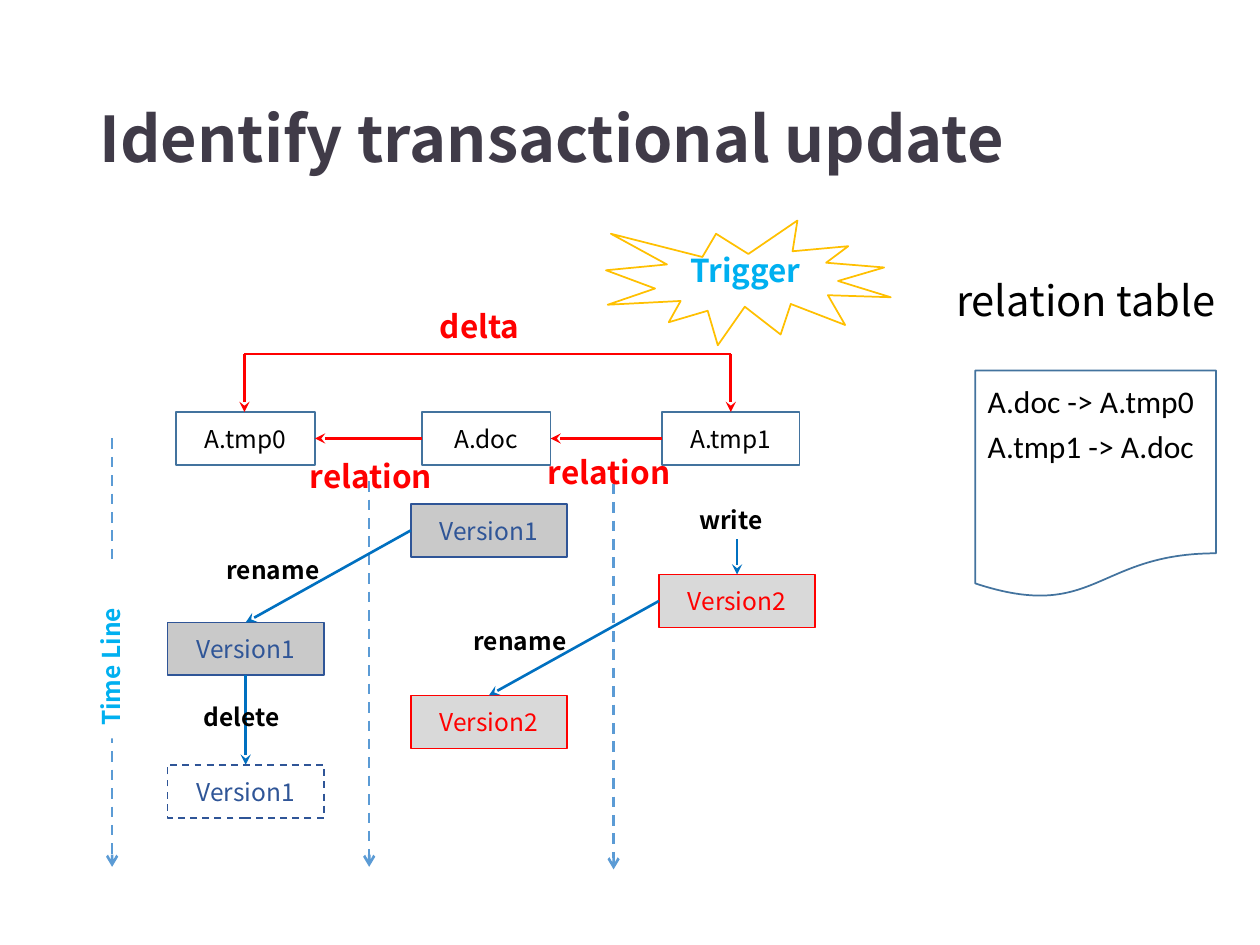
from lxml.etree import SubElement
from pptx import Presentation
from pptx.dml.color import RGBColor
from pptx.enum.dml import MSO_LINE
from pptx.enum.shapes import MSO_CONNECTOR, MSO_SHAPE
from pptx.enum.text import MSO_ANCHOR, PP_ALIGN
from pptx.oxml.ns import qn
from pptx.util import Inches, Pt

SANS, LATIN = "Noto Sans CJK SC", "Calibri"
INK, BLACK, WHITE = RGBColor(64, 59, 72), RGBColor(0, 0, 0), RGBColor(255, 255, 255)
STEEL, NAVY = RGBColor(67, 115, 158), RGBColor(47, 85, 151)
SKY, BLUE, CYAN = RGBColor(91, 155, 213), RGBColor(0, 112, 192), RGBColor(0, 176, 240)
RED, GOLD = RGBColor(255, 0, 0), RGBColor(255, 192, 0)
GREY, PALE = RGBColor(201, 201, 201), RGBColor(217, 217, 217)

# Grid: lane centres, and the tops of the rows of boxes
LANES = (1.95, 3.88, 5.85)
FILE_ROW, FILE_H = 3.27, 0.42
VER_W, VER_H = 1.24, 0.42
BAR_Y = 2.81

TITLE = "Identify transactional update"
HEADING = "relation table"
# Name, centre, width
FILES = [("A.tmp0", 1.95, 1.1), ("A.doc", 3.86, 1.02), ("A.tmp1", 5.8, 1.09)]
# Key: text, lane, top, colour, fill
VERSIONS = {
    "doc1": ("Version1", 1, 4.0, NAVY, GREY),
    "tmp1": ("Version2", 2, 4.56, RED, PALE),
    "doc2": ("Version2", 1, 5.52, RED, PALE),
    "old": ("Version1", 0, 4.94, NAVY, GREY),
    "gone": ("Version1", 0, 6.07, NAVY, None),
}
RENAMES = [("tmp1", "doc2"), ("doc1", "old")]
# Lane divider: x, top, bottom
DIVIDERS = [(0.89, 3.48, 6.88), (2.93, 3.82, 6.88), (4.87, 3.84, 6.9)]
# Text, left, top, width
STEPS = [("write", 5.45, 3.96, 0.86), ("rename", 3.66, 4.92, 1.06),
         ("rename", 1.7, 4.36, 1.06), ("delete", 1.52, 5.52, 1.06)]
RELATIONS = [("relation", 2.36, 3.58, 1.25), ("relation", 4.25, 3.55, 1.25)]
ENTRIES = ["A.doc -> A.tmp0", "A.tmp1 -> A.doc"]

deck = Presentation()
deck.slide_width, deck.slide_height = Inches(10), Inches(7.5)
slide = deck.slides.add_slide(deck.slide_layouts[1])


def write(shape, text, size=14, color=BLACK, bold=False, font=SANS,
          align=PP_ALIGN.LEFT, anchor=MSO_ANCHOR.TOP, spacing=None, inset=0.1):
    frame = shape.text_frame
    frame.word_wrap = True
    frame.vertical_anchor = anchor
    frame.margin_left = Inches(inset)
    para = frame.paragraphs[0]
    para.alignment = align
    para.space_before = Pt(0)
    para.line_spacing = spacing
    run = para.add_run()
    run.text = text
    run.font.size, run.font.bold, run.font.name = Pt(size), bold, font
    run.font.color.rgb = color


def place(shape, left, top, width, height):
    shape.left, shape.top = Inches(left), Inches(top)
    shape.width, shape.height = Inches(width), Inches(height)


def draw(kind, left, top, width, height, fill=None, line=None, dash=None):
    shape = slide.shapes.add_shape(kind, *map(Inches, (left, top, width, height)))
    shape.shadow.inherit = False
    if fill is None:
        shape.fill.background()
    else:
        shape.fill.solid()
        shape.fill.fore_color.rgb = fill
    if line is None:
        shape.line.fill.background()
    else:
        shape.line.color.rgb, shape.line.width = line, Pt(1)
        shape.line.dash_style = dash
    return shape


def label(text, left, top, width, height=0.34, **style):
    box = slide.shapes.add_textbox(*map(Inches, (left, top, width, height)))
    write(box, text, **style)


def link(start, end, color, head="stealth", dash=None):
    line = slide.shapes.add_connector(MSO_CONNECTOR.STRAIGHT, *map(Inches, start + end))
    line.line.color.rgb, line.line.width = color, Pt(1.5)
    line.line.dash_style = dash
    if head:
        SubElement(line.line._get_or_add_ln(), qn("a:tailEnd"), type=head)
    SubElement(line._element.spPr, qn("a:effectLst"))


def top_mid(key):
    _, lane, top, *_ = VERSIONS[key]
    return LANES[lane], top


centred = {"align": PP_ALIGN.CENTER, "anchor": MSO_ANCHOR.MIDDLE}

# Title and heading
title, heading = slide.placeholders
place(title, 0.69, 0.4, 8.62, 1.45)
write(title, TITLE, size=36, color=INK, bold=True, anchor=MSO_ANCHOR.MIDDLE, spacing=0.9)
place(heading, 7.39, 2.21, 2.45, 0.58)
props = heading.text_frame.paragraphs[0]._p.get_or_add_pPr()
props.set("marL", "0")
props.set("indent", "0")
SubElement(props, qn("a:buNone"))
write(heading, HEADING, size=23.8, align=PP_ALIGN.CENTER, spacing=0.8)

# Files and their relations
for name, mid, width in FILES:
    box = draw(MSO_SHAPE.RECTANGLE, mid - width / 2, FILE_ROW, width, FILE_H, line=STEEL)
    write(box, name, **centred)
mid_y = FILE_ROW + FILE_H / 2
for (_, left, left_w), (_, right, right_w) in zip(FILES, FILES[1:]):
    link((right - right_w / 2, mid_y), (left + left_w / 2, mid_y), RED)

# Delta bracket
ends = (1.94, 5.8)
for x in ends:
    link((x, BAR_Y), (x, FILE_ROW), RED)
link((ends[0], BAR_Y), (ends[1], BAR_Y), RED, head=None)
delta = draw(MSO_SHAPE.RECTANGLE, 3.34, 2.39, 1.02, 0.4, fill=WHITE)
write(delta, "delta", size=18, color=RED, bold=True, inset=0.15)

# Time line and lane dividers
for x, top, bottom in DIVIDERS:
    link((x, top), (x, bottom), SKY, head="arrow", dash=MSO_LINE.DASH)
clock = draw(MSO_SHAPE.RECTANGLE, 0.17, 4.98, 1.42, 0.34, fill=WHITE)
clock.rotation = 270
write(clock, "Time Line", color=CYAN, bold=True)

# Versions and the steps between them
for text, lane, top, color, fill in VERSIONS.values():
    box = draw(MSO_SHAPE.RECTANGLE, LANES[lane] - VER_W / 2, top, VER_W, VER_H, fill,
               color, None if fill else MSO_LINE.DASH)
    write(box, text, color=color, **centred)
for source, target in RENAMES:
    x, y = top_mid(source)
    link((x - VER_W / 2, y + VER_H / 2), top_mid(target), BLUE)
x, y = top_mid("tmp1")
link((x, y - 0.28), (x, y), BLUE)
x, y = top_mid("old")
link((x, y + VER_H), top_mid("gone"), BLUE)
for step in STEPS:
    label(*step, bold=True)
for relation in RELATIONS:
    label(*relation, 0.4, size=18, color=RED, bold=True)

# Relation table and trigger
draw(MSO_SHAPE.FLOWCHART_DOCUMENT, 7.74, 2.94, 1.91, 1.81, line=STEEL)
for row, entry in enumerate(ENTRIES):
    label(entry, 7.74, 2.98 + 0.36 * row, 1.91, 0.4, size=18, font=LATIN)
draw(MSO_SHAPE.EXPLOSION1, 4.81, 1.75, 2.26, 0.99, line=GOLD)
label("Trigger", 5.38, 1.94, 1.2, 0.4, size=18, color=CYAN, bold=True)

deck.save("out.pptx")
